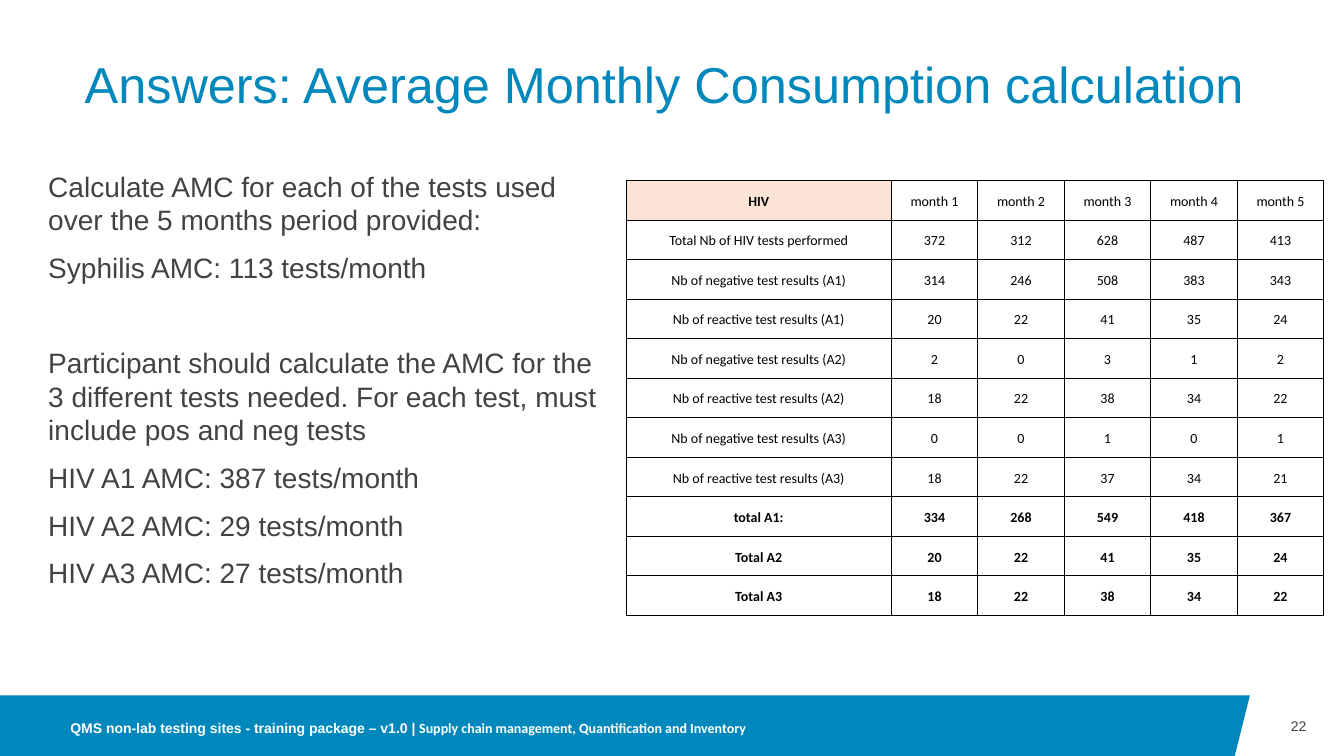
from dataclasses import dataclass

from lxml.etree import SubElement
from pptx import Presentation
from pptx.dml.color import RGBColor
from pptx.enum.text import MSO_ANCHOR as Anchor, PP_ALIGN as Align
from pptx.oxml.ns import qn
from pptx.util import Inches, Pt


@dataclass(frozen=True)
class Theme:
    blue: str = "0087BC"
    grey: str = "424242"
    black: str = "000000"
    white: str = "FFFFFF"
    peach: str = "FBE4D5"
    heading_font: str = "Arial"
    table_font: str = "Calibri"
    title_size: int = 36
    body_size: int = 20
    small_size: int = 10
    border_width: float = 0.5


THEME = Theme()
SLIDE_WIDTH, SLIDE_HEIGHT = 13.33, 7.5

TITLE = "Answers: Average Monthly Consumption calculation"
ANSWER_GROUPS = [
    [
        "Calculate AMC for each of the tests used over the 5 months period provided:",
        "Syphilis AMC: 113 tests/month",
    ],
    [
        "Participant should calculate the AMC for the 3 different tests needed. "
        "For each test, must include pos and neg tests",
        "HIV A1 AMC: 387 tests/month",
        "HIV A2 AMC: 29 tests/month",
        "HIV A3 AMC: 27 tests/month",
    ],
]
PACKAGE = "QMS non-lab testing sites - training package – v1.0 | "
MODULE = "Supply chain management, Quantification and Inventory"
PAGE_NUMBER = "22"
CONSUMPTION = [
    ["HIV"] + [f"month {month}" for month in range(1, 6)],
    ["Total Nb of HIV tests performed", 372, 312, 628, 487, 413],
    ["Nb of negative test results (A1)", 314, 246, 508, 383, 343],
    ["Nb of reactive test results (A1)", 20, 22, 41, 35, 24],
    ["Nb of negative test results (A2)", 2, 0, 3, 1, 2],
    ["Nb of reactive test results (A2)", 18, 22, 38, 34, 22],
    ["Nb of negative test results (A3)", 0, 0, 1, 0, 1],
    ["Nb of reactive test results (A3)", 18, 22, 37, 34, 21],
    ["total A1:", 334, 268, 549, 418, 367],
    ["Total A2", 20, 22, 41, 35, 24],
    ["Total A3", 18, 22, 38, 34, 22],
]
TOTAL_ROWS = 3


def style_font(font, name, size, color, bold=False):
    font.name, font.size, font.bold = name, Pt(size), bold
    font.color.rgb = RGBColor.from_string(color)


def add_text_frame(slide, box, anchor=Anchor.TOP, inset=None):
    """Add a wrapping text box; inset replaces the default margins."""
    frame = slide.shapes.add_textbox(*map(Inches, box)).text_frame
    frame.word_wrap = True
    frame.vertical_anchor = anchor
    if inset is not None:
        frame.margin_left = frame.margin_right = Inches(inset)
        frame.margin_top = frame.margin_bottom = Inches(inset)
    return frame


def add_title(slide, box):
    paragraph = add_text_frame(slide, box, Anchor.MIDDLE, 0).paragraphs[0]
    paragraph.text = TITLE
    paragraph.line_spacing = 0.9
    style_font(paragraph.font, THEME.heading_font, THEME.title_size, THEME.blue)


def add_answers(slide, box):
    frame = add_text_frame(slide, box)
    paragraph = frame.paragraphs[0]
    for group_index, group in enumerate(ANSWER_GROUPS):
        for index, answer in enumerate(group):
            if paragraph.text:
                paragraph = frame.add_paragraph()
            paragraph.text = answer
            starts_later_group = group_index > 0 and index == 0
            paragraph.space_before = Pt(44 if starts_later_group else 10)
            style_font(paragraph.font, THEME.heading_font, THEME.body_size, THEME.grey)


def outline_cell(cell):
    properties = cell._tc.get_or_add_tcPr()
    for position, side in enumerate(("lnL", "lnR", "lnT", "lnB")):
        line = SubElement(properties, qn(f"a:{side}"), w=str(Pt(THEME.border_width)))
        fill = SubElement(line, qn("a:solidFill"))
        SubElement(fill, qn("a:srgbClr"), val=THEME.black)
        properties.insert(position, line)


def fill_cell(cell, value, bold, fill):
    cell.fill.solid()
    cell.fill.fore_color.rgb = RGBColor.from_string(fill)
    outline_cell(cell)
    cell.vertical_anchor = Anchor.MIDDLE
    cell.margin_left = cell.margin_right = Inches(0.1)
    cell.margin_top = cell.margin_bottom = Inches(0.1)
    paragraph = cell.text_frame.paragraphs[0]
    paragraph.text = str(value)
    paragraph.alignment = Align.CENTER
    paragraph.line_spacing = 1.15
    style_font(paragraph.font, THEME.table_font, THEME.small_size, THEME.black, bold)


def add_consumption_table(slide, box):
    row_count, column_count = len(CONSUMPTION), len(CONSUMPTION[0])
    table = slide.shapes.add_table(row_count, column_count, *map(Inches, box)).table
    label_share = 0.38
    month_share = (1 - label_share) / (column_count - 1)
    for index, column in enumerate(table.columns):
        column.width = Inches(box[2] * (month_share if index else label_share))
    for row, values in enumerate(CONSUMPTION):
        for column, value in enumerate(values):
            corner = row == column == 0
            bold = corner or row >= row_count - TOTAL_ROWS
            fill = THEME.peach if corner else THEME.white
            fill_cell(table.cell(row, column), value, bold, fill)


def add_footer(slide, box):
    left, top, width, height = box
    band_width = width * 0.93
    slant = height * 0.25
    right, bottom = left + band_width, top + height
    builder = slide.shapes.build_freeform(Inches(left), Inches(top))
    corners = [(right, top), (right - slant, bottom), (left, bottom)]
    builder.add_line_segments([(Inches(x), Inches(y)) for x, y in corners])
    band = builder.convert_to_shape()
    band.shadow.inherit = False
    band.fill.solid()
    band.fill.fore_color.rgb = RGBColor.from_string(THEME.blue)
    band.line.fill.background()

    caption_box = (left + width * 0.045, top + 0.19, width * 0.65, 0.27)
    caption = add_text_frame(slide, caption_box).paragraphs[0]
    for text, font in ((PACKAGE, THEME.heading_font), (MODULE, THEME.table_font)):
        run = caption.add_run()
        run.text = text
        style_font(run.font, font, THEME.small_size, THEME.white, True)

    number_box = (right, top, width * 0.042, height)
    number = add_text_frame(slide, number_box, Anchor.MIDDLE, 0).paragraphs[0]
    number.text = PAGE_NUMBER
    number.alignment = Align.RIGHT
    style_font(number.font, THEME.heading_font, THEME.small_size, THEME.grey)


def main():
    presentation = Presentation()
    presentation.slide_width = Inches(SLIDE_WIDTH)
    presentation.slide_height = Inches(SLIDE_HEIGHT)
    slide = presentation.slides.add_slide(presentation.slide_layouts[6])
    add_title(slide, (0.84, 0.35, 12.29, 1.03))
    add_answers(slide, (0.38, 1.63, 5.72, 4.86))
    add_consumption_table(slide, (6.21, 1.79, 6.92, 4.18))
    footer_top = SLIDE_HEIGHT * 0.92
    add_footer(slide, (0, footer_top, SLIDE_WIDTH, SLIDE_HEIGHT - footer_top))
    presentation.save("out.pptx")


if __name__ == "__main__":
    main()
